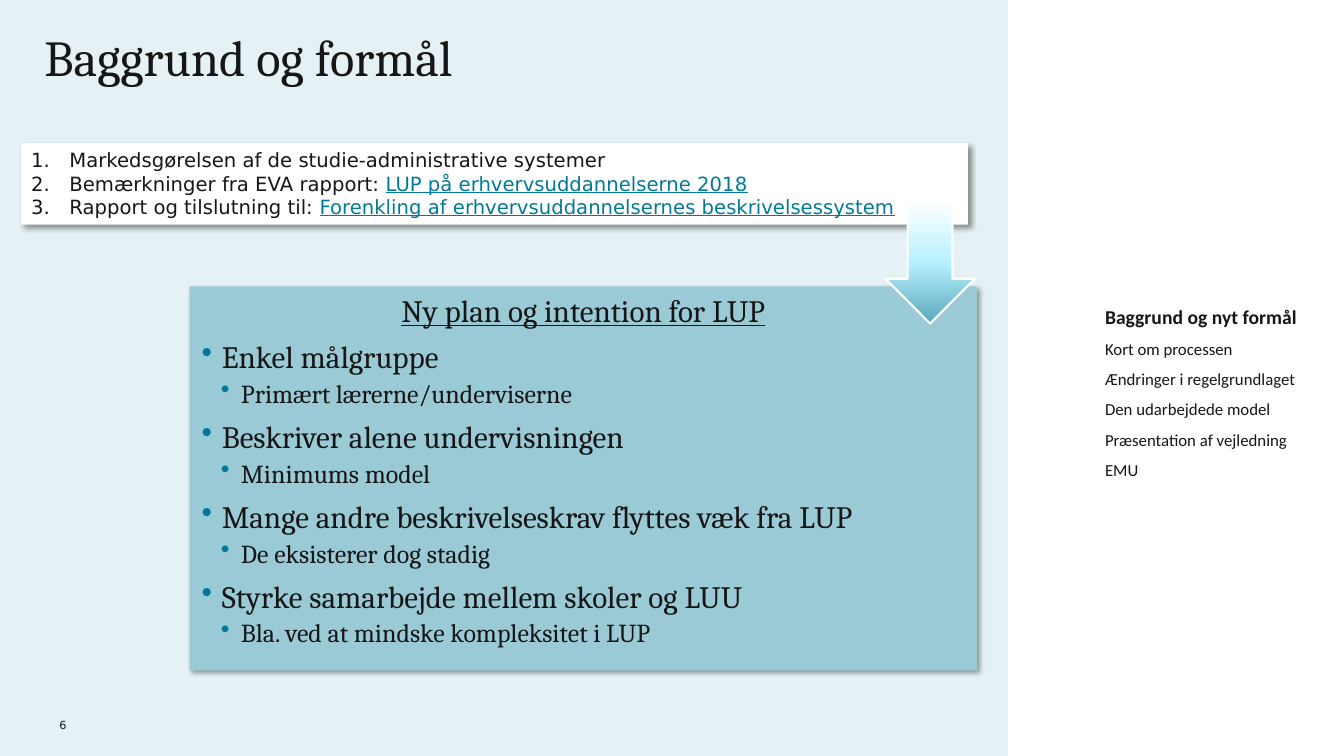
from lxml import etree
from pptx import Presentation
from pptx import util as u
from pptx.dml.color import RGBColor
from pptx.enum import shapes, text
from pptx.oxml import ns

PALE = RGBColor(0xE5, 0xF1, 0xF4)
WHITE = RGBColor(0xFF, 0xFF, 0xFF)
INK = RGBColor(0x16, 0x16, 0x16)
TEAL = RGBColor(0x00, 0x7A, 0x98)
PANEL = RGBColor(0x99, 0xCA, 0xD6)
ARROW_STOPS = [(0, RGBColor(0x58, 0xA8, 0xBC)), (50, RGBColor(0xB7, 0xF1, 0xFF)), (100, WHITE)]


def add_xml(parent, tag, **attributes):
    return etree.SubElement(parent, ns.qn(tag), {k: str(v) for k, v in attributes.items()})


class SlideBuilder:
    """Holds the text style and the slide being drawn."""

    def __init__(self, slide, ink):
        self.slide = slide
        self.ink = ink

    def rectangle(self, box, color, shadow=False):
        shape = self.shape(shapes.MSO_SHAPE.RECTANGLE, box)
        shape.fill.solid()
        shape.fill.fore_color.rgb = color
        shape.line.fill.background()
        if shadow:
            effects = shape._element.spPr.find(ns.qn("a:effectLst"))
            outer = add_xml(effects, "a:outerShdw", blurRad=u.Pt(4), dist=u.Pt(3),
                            dir=45 * 60000, algn="tl", rotWithShape=0)
            add_xml(add_xml(outer, "a:srgbClr", val="000000"), "a:alpha", val=40000)
        return shape

    def shape(self, kind, box):
        shape = self.slide.shapes.add_shape(kind, *map(u.Inches, box))
        shape.shadow.inherit = False
        return shape

    def gradient_arrow(self, box, stops):
        arrow = self.shape(shapes.MSO_SHAPE.DOWN_ARROW, box)
        arrow.line.color.rgb = WHITE
        arrow.line.width = u.Pt(1.5)
        gradient = etree.Element(ns.qn("a:gradFill"), rotWithShape="1")
        stop_list = add_xml(gradient, "a:gsLst")
        for position, color in stops:
            stop = add_xml(stop_list, "a:gs", pos=position * 1000)
            add_xml(stop, "a:srgbClr", val=color)
        add_xml(gradient, "a:lin", ang=270 * 60000, scaled=0)
        arrow._element.spPr.find(ns.qn("a:prstGeom")).addnext(gradient)

    def text_box(self, box):
        return self.slide.shapes.add_textbox(*map(u.Inches, box))

    def frame(self, shape, margins=(0, 0), anchor=text.MSO_ANCHOR.TOP):
        frame = shape.text_frame
        side, vertical = map(u.Inches, margins)
        layout = dict(word_wrap=True, vertical_anchor=anchor, margin_left=side,
                      margin_right=side, margin_top=vertical, margin_bottom=vertical)
        for name, value in layout.items():
            setattr(frame, name, value)
        return frame

    def paragraph(self, frame, runs, font, layout=None, indent=0, bullet=None, number=None):
        """Adds a paragraph; runs is a list of (words, is_link)."""
        first = frame.paragraphs[0]
        paragraph = frame.add_paragraph() if first.runs else first
        properties = paragraph._p.get_or_add_pPr()
        if bullet or number:
            hanging = 0.2 if bullet else indent
            properties.set("marL", str(u.Inches(indent)))
            properties.set("indent", str(-u.Inches(hanging)))
        if bullet:
            add_xml(add_xml(properties, "a:buClr"), "a:srgbClr", val=TEAL)
            add_xml(properties, "a:buChar", char=bullet)
        if number:
            add_xml(properties, "a:buAutoNum", type=number)
        for name, value in {"alignment": text.PP_ALIGN.LEFT, **(layout or {})}.items():
            setattr(paragraph, name, value)
        for words, is_link in runs:
            run = paragraph.add_run()
            run.text = words
            for name, value in {**font, **({"underline": True} if is_link else {})}.items():
                setattr(run.font, name, value)
            run.font.color.rgb = TEAL if is_link else self.ink


def main():
    presentation = Presentation()
    presentation.slide_width, presentation.slide_height = u.Inches(13.33), u.Inches(7.5)
    slide = presentation.slides.add_slide(presentation.slide_layouts[6])
    slide.background.fill.solid()
    slide.background.fill.fore_color.rgb = PALE
    builder = SlideBuilder(slide, INK)

    # Side band, title and page number
    builder.rectangle((10, 0, 3.33, 7.5), WHITE)
    title = builder.frame(builder.text_box((0.44, 0.36, 9.11, 0.71)))
    builder.paragraph(title, [("Baggrund og formål", False)],
                      dict(name="Cambria", size=u.Pt(36)), dict(line_spacing=0.83))
    page = builder.frame(builder.text_box((0.59, 7.06, 0.3, 0.2)), anchor=text.MSO_ANCHOR.BOTTOM)
    builder.paragraph(page, [("6", False)], dict(name="DejaVu Sans", size=u.Pt(8)))

    # Plan panel: topics, each with one detail
    plan = builder.frame(builder.rectangle((1.88, 2.84, 7.81, 3.81), PANEL, shadow=True), (0.12, 0.12))
    topic_font = dict(name="Cambria", size=u.Pt(22.2))
    detail_font = dict(name="Cambria", size=u.Pt(18.5))
    builder.paragraph(plan, [("Ny plan og intention for LUP", False)],
                      {**topic_font, "underline": True},
                      dict(alignment=text.PP_ALIGN.CENTER, line_spacing=0.8))
    topics = [
        ("Enkel målgruppe", "Primært lærerne/underviserne"),
        ("Beskriver alene undervisningen", "Minimums model"),
        ("Mange andre beskrivelseskrav flyttes væk fra LUP", "De eksisterer dog stadig"),
        ("Styrke samarbejde mellem skoler og LUU", "Bla. ved at mindske kompleksitet i LUP"),
    ]
    for topic, detail in topics:
        builder.paragraph(plan, [(topic, False)], topic_font,
                          dict(line_spacing=0.8, space_before=u.Pt(12)), 0.2, "•")
        builder.paragraph(plan, [(detail, False)], detail_font,
                          dict(level=1, line_spacing=0.8, space_before=u.Pt(6)), 0.39, "•")

    # Numbered background list
    reasons = builder.frame(builder.rectangle((0.21, 1.42, 9.39, 0.81), WHITE, shadow=True), (0.1, 0.05))
    for runs in (
        [("Markedsgørelsen af de studie-administrative systemer", False)],
        [("Bemærkninger fra EVA rapport: ", False), ("LUP på erhvervsuddannelserne 2018", True)],
        [("Rapport og tilslutning til: ", False),
         ("Forenkling af erhvervsuddannelsernes beskrivelsessystem", True)],
    ):
        builder.paragraph(reasons, runs, dict(name="DejaVu Sans", size=u.Pt(14)),
                          indent=0.38, number="arabicPeriod")

    # Arrow from the background to the plan
    builder.gradient_arrow((8.78, 1.99, 0.89, 1.22), ARROW_STOPS)

    # Agenda with the current item in bold
    agenda = builder.frame(builder.text_box((10.96, 2.91, 2.05, 1.84)))
    items = ["Baggrund og nyt formål", "Kort om processen", "Ændringer i regelgrundlaget",
             "Den udarbejdede model", "Præsentation af vejledning", "EMU"]
    for item in items:
        current = item == items[0]
        builder.paragraph(agenda, [(item, False)],
                          dict(name="Calibri", size=u.Pt(14 if current else 12), bold=current),
                          dict(line_spacing=1.5))

    presentation.save("out.pptx")


if __name__ == "__main__":
    main()
